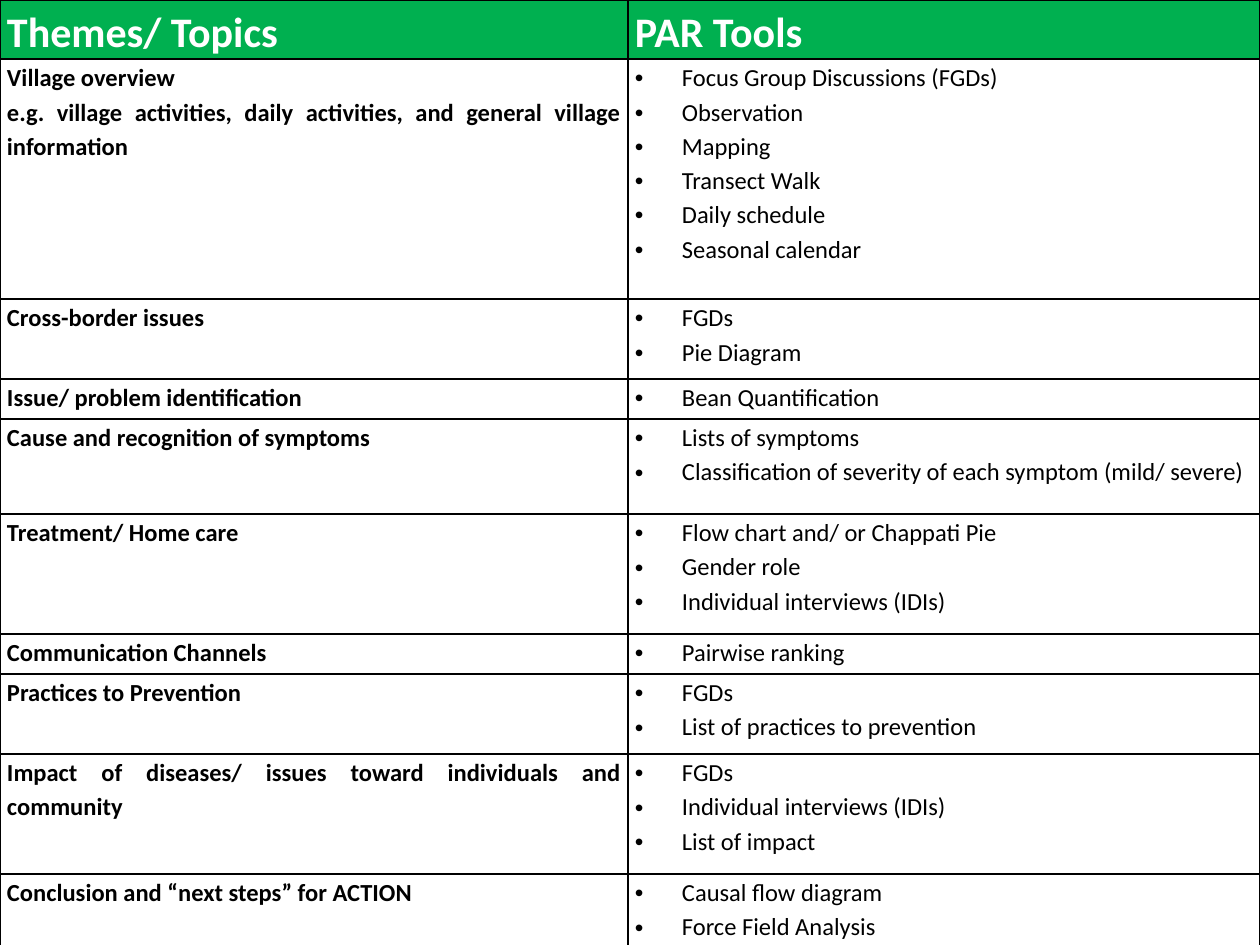
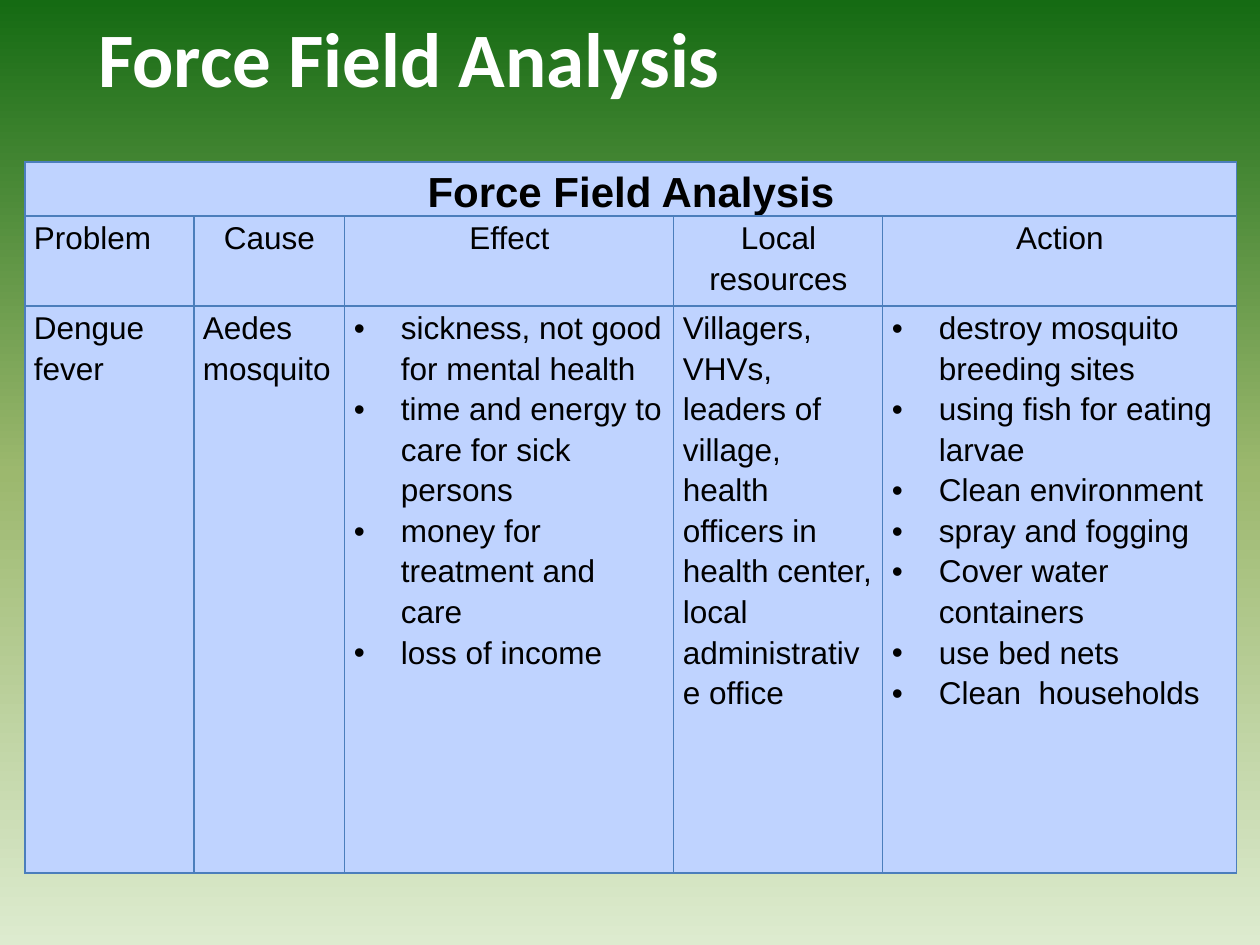
from copy import deepcopy
from dataclasses import dataclass

from lxml import etree
from pptx import Presentation
from pptx.dml.color import RGBColor
from pptx.enum.text import MSO_ANCHOR, PP_ALIGN
from pptx.oxml.ns import qn
from pptx.util import Pt

LEFT, CENTER, JUSTIFY = PP_ALIGN.LEFT, PP_ALIGN.CENTER, PP_ALIGN.JUSTIFY
TOP = MSO_ANCHOR.TOP
TITLE_ONLY, BLANK = 5, 6
EMU_PER_PX = 914400 / 126


@dataclass(frozen=True)
class Theme:
    black: str = "000000"
    white: str = "FFFFFF"
    header_green: str = "00B050"
    cell_blue: str = "BFD3FF"
    border_blue: str = "4B7EBC"
    gradient: tuple = ((0, "DDEBCF"), (0.5, "9CB86E"), (1, "156B13"))
    heading_font: str = "Calibri"
    table_font: str = "Arial"
    title_size: int = 44
    header_size: int = 24
    label_size: int = 18
    body_size: int = 14
    line_spacing: float = 1.15
    bullet_indent: int = 47


THEME = Theme()


@dataclass(frozen=True)
class TextStyle:
    font: str
    size: int
    color: str = THEME.black
    bold: bool = False
    align: PP_ALIGN = LEFT


@dataclass(frozen=True)
class CellStyle:
    text: TextStyle
    fill: str
    border: str
    border_width: float
    margin: int


# Content: a string holds plain paragraphs, a list holds bullets
TOPIC_HEADER = ("Themes/ Topics", "PAR Tools")
TOPIC_ROWS = [
    ("Village overview\ne.g. village activities, daily activities, and general village information",
     ["Focus Group Discussions (FGDs)", "Observation", "Mapping", "Transect Walk",
      "Daily schedule", "Seasonal calendar"]),
    ("Cross-border issues", ["FGDs", "Pie Diagram"]),
    ("Issue/ problem identification", ["Bean Quantification"]),
    ("Cause and recognition of symptoms",
     ["Lists of symptoms", "Classification of severity of each symptom (mild/ severe)"]),
    ("Treatment/ Home care",
     ["Flow chart and/ or Chappati Pie", "Gender role", "Individual interviews (IDIs)"]),
    ("Communication Channels", ["Pairwise ranking"]),
    ("Practices to Prevention", ["FGDs", "List of practices to prevention"]),
    ("Impact of diseases/ issues toward individuals and community",
     ["FGDs", "Individual interviews (IDIs)", "List of impact"]),
    ("Conclusion and “next steps” for ACTION", ["Causal flow diagram", "Force Field Analysis"]),
]
TOPIC_WIDTHS = (628, 632)
TOPIC_HEIGHTS = (59, 240, 80, 40, 95, 120, 40, 80, 120, 80)

ANALYSIS_TITLE = "Force Field Analysis"
ANALYSIS_ROWS = [
    (ANALYSIS_TITLE, "", "", "", ""),
    ("Problem", "Cause", "Effect", "Local resources", "Action"),
    ("Dengue fever", "Aedes mosquito",
     ["sickness, not good for mental health", "time and energy to care for sick persons",
      "money for treatment and care", "loss of income"],
     "Villagers, VHVs, leaders of village, health officers in health center, "
     "local administrative office",
     ["destroy mosquito breeding sites", "using fish for eating larvae", "Clean environment",
      "spray and fogging", "Cover water containers", "use bed nets", "Clean  households"]),
]
ANALYSIS_WIDTHS = (169, 151, 329, 209, 354)
ANALYSIS_HEIGHTS = (54, 90, 567)


def px(length):
    return round(length * EMU_PER_PX)


def rgb(color):
    return RGBColor.from_string(color)


# Text
def add_bullet(paragraph):
    properties = paragraph._p.get_or_add_pPr()
    properties.set("marL", str(px(THEME.bullet_indent)))
    properties.set("indent", str(-px(THEME.bullet_indent)))
    etree.SubElement(properties, qn("a:buFont"), typeface="Arial")
    etree.SubElement(properties, qn("a:buChar"), char="•")


def format_paragraph(paragraph, style):
    paragraph.alignment = style.align
    font = paragraph.font
    font.name, font.size, font.bold = style.font, Pt(style.size), style.bold
    font.color.rgb = rgb(style.color)


def fill_text(text_frame, content, style):
    bulleted = isinstance(content, list)
    lines = content if bulleted else content.split("\n")
    for index, line in enumerate(lines):
        paragraph = text_frame.add_paragraph() if index else text_frame.paragraphs[0]
        paragraph.text = line
        if bulleted:
            add_bullet(paragraph)
        paragraph.line_spacing = THEME.line_spacing
        format_paragraph(paragraph, style)


# Tables
def draw_borders(cell, color, width):
    properties = cell._tc.get_or_add_tcPr()
    for side in ("lnL", "lnR", "lnT", "lnB"):
        line = etree.SubElement(properties, qn(f"a:{side}"), w=str(Pt(width)))
        fill = etree.SubElement(line, qn("a:solidFill"))
        etree.SubElement(fill, qn("a:srgbClr"), val=color)


def format_cell(cell, content, style):
    cell.margin_left = cell.margin_right = px(style.margin)
    cell.margin_top = cell.margin_bottom = 0
    draw_borders(cell, style.border, style.border_width)
    cell.fill.solid()
    cell.fill.fore_color.rgb = rgb(style.fill)
    fill_text(cell.text_frame, content, style.text)


def add_grid(slide, left, top, widths, heights, rows, style_of):
    """Add a table; style_of(row, column) gives the style of each cell."""
    frame = slide.shapes.add_table(len(heights), len(widths), px(left), px(top),
                                   px(sum(widths)), px(sum(heights)))
    table = frame.table
    table.first_row = table.horz_banding = False
    for column, width in zip(table.columns, widths):
        column.width = px(width)
    for row, height in zip(table.rows, heights):
        row.height = px(height)
    for row_index, contents in enumerate(rows):
        for column_index, content in enumerate(contents):
            format_cell(table.cell(row_index, column_index), content,
                        style_of(row_index, column_index))
    return table


def topic_style(row, column):
    if row == 0:
        text = TextStyle(THEME.heading_font, THEME.header_size, THEME.white, True, JUSTIFY)
    else:
        text = TextStyle(THEME.heading_font, THEME.body_size, bold=column == 0, align=JUSTIFY)
    fill = THEME.white if row else THEME.header_green
    return CellStyle(text, fill, THEME.black, 1, margin=7)


def analysis_style(row, column):
    if row == 0:
        text = TextStyle(THEME.table_font, THEME.header_size, bold=True, align=CENTER)
    else:
        align = CENTER if row == 1 and column else LEFT
        text = TextStyle(THEME.table_font, THEME.label_size, align=align)
    return CellStyle(text, THEME.cell_blue, THEME.border_blue, 0.75, margin=9)


# Background and title
def set_gradient_background(slide):
    fill = slide.background.fill
    fill.gradient()
    fill.gradient_angle = 90
    stop_list = next(slide.element.iter(qn("a:gsLst")))
    stop_list.append(deepcopy(stop_list[-1]))
    for stop, (position, color) in zip(fill.gradient_stops, THEME.gradient):
        stop.position = position
        stop.color.rgb = rgb(color)


def set_title(slide, text):
    title = slide.shapes.title
    title.left, title.top, title.width, title.height = px(23), 0, px(1014), px(120)
    text_frame = title.text_frame
    text_frame.text = text
    text_frame.vertical_anchor = TOP
    text_frame.margin_left, text_frame.margin_top = px(75), px(10)
    format_paragraph(text_frame.paragraphs[0],
                     TextStyle(THEME.heading_font, THEME.title_size, THEME.white, True))


# Slides
def add_topics_slide(presentation):
    slide = presentation.slides.add_slide(presentation.slide_layouts[BLANK])
    add_grid(slide, 0, 0, TOPIC_WIDTHS, TOPIC_HEIGHTS, [TOPIC_HEADER, *TOPIC_ROWS], topic_style)


def add_analysis_slide(presentation):
    slide = presentation.slides.add_slide(presentation.slide_layouts[TITLE_ONLY])
    set_gradient_background(slide)
    set_title(slide, ANALYSIS_TITLE)
    table = add_grid(slide, 25, 162, ANALYSIS_WIDTHS, ANALYSIS_HEIGHTS, ANALYSIS_ROWS,
                     analysis_style)
    table.cell(0, 0).merge(table.cell(0, len(ANALYSIS_WIDTHS) - 1))


def main():
    presentation = Presentation()
    presentation.slide_width, presentation.slide_height = px(1260), px(945)
    add_topics_slide(presentation)
    add_analysis_slide(presentation)
    presentation.save("out.pptx")


if __name__ == "__main__":
    main()
